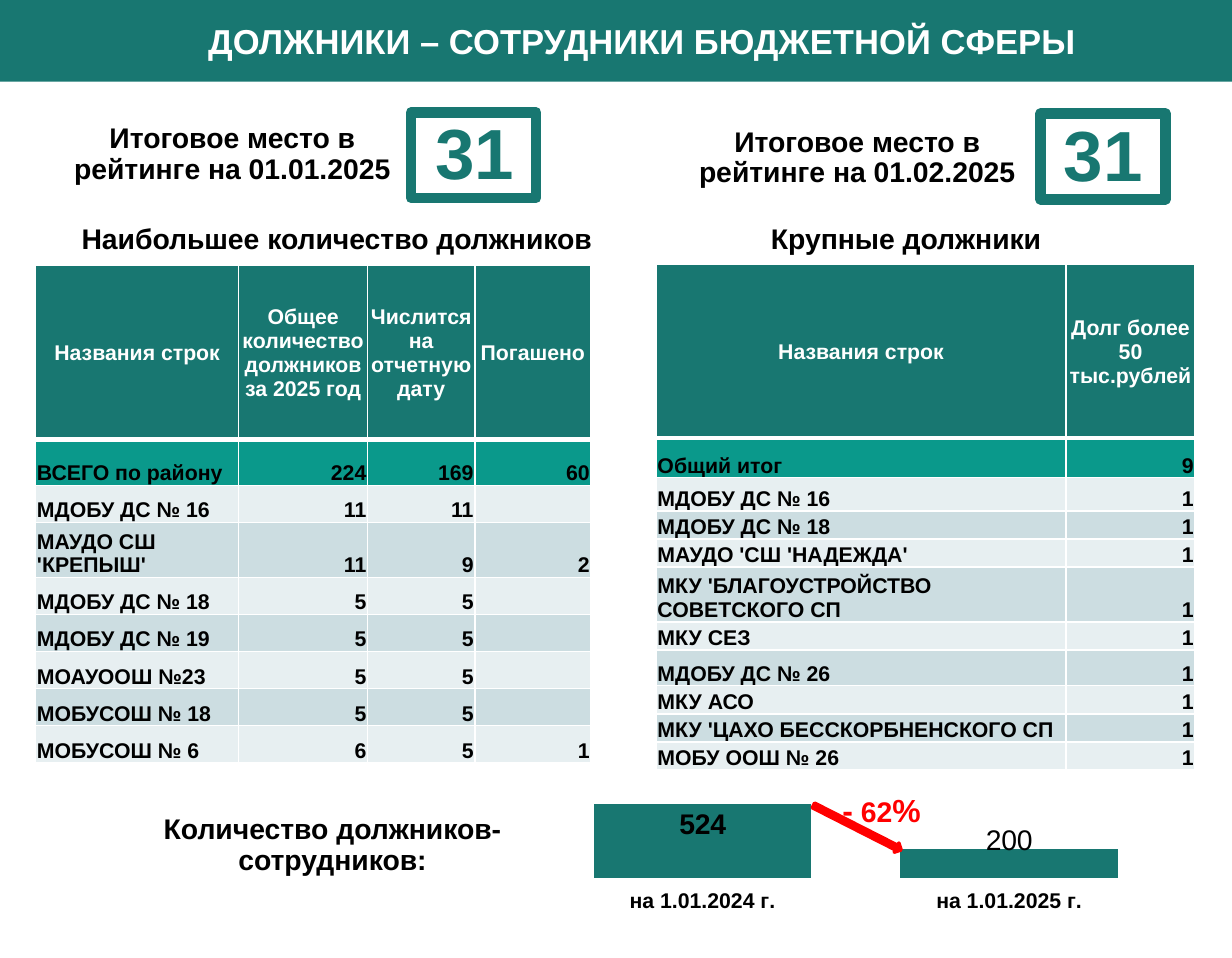
"""Builds the slide on public-sector employees in debt: ratings, two tables and a chart."""
from lxml.etree import fromstring
from pptx import Presentation
from pptx.chart.data import CategoryChartData
from pptx.dml.color import RGBColor
from pptx.enum.chart import XL_CHART_TYPE, XL_LABEL_POSITION, XL_TICK_LABEL_POSITION, XL_TICK_MARK
from pptx.enum.shapes import MSO_SHAPE
from pptx.enum.text import MSO_ANCHOR, MSO_AUTO_SIZE, PP_ALIGN
from pptx.oxml import parse_xml
from pptx.oxml.ns import nsdecls, qn
from pptx.util import Inches, Pt

COLORS = {"teal": "187771", "total": "0A998B", "light": "E7EFF1", "mid": "CCDDE1",
          "black": "000000", "white": "FFFFFF", "red": "FF0000"}
RGB = {name: RGBColor.from_string(value) for name, value in COLORS.items()}
COLUMNS, ROWS, CELL = 965, 750, Inches(0.01)
LEFT, CENTER, RIGHT = PP_ALIGN.LEFT, PP_ALIGN.CENTER, PP_ALIGN.RIGHT
TIGHT = {"margin_left": 7 * CELL, "margin_right": 7 * CELL, "margin_top": 4 * CELL,
         "margin_bottom": 4 * CELL, "vertical_anchor": MSO_ANCHOR.MIDDLE}
LOOSE = {"vertical_anchor": MSO_ANCHOR.TOP}
CELL_FORMAT = {"margin_left": CELL, "margin_right": CELL, "margin_top": CELL, "margin_bottom": 0}


def grid(*lengths):
    return [length * CELL for length in lengths]


def write(frame, runs, color, align, frame_format, spacing=None):
    for name, value in frame_format.items():
        setattr(frame, name, value)
    paragraph = frame.paragraphs[0]
    paragraph.alignment = align
    paragraph.line_spacing = spacing
    for text, size in runs:
        run = paragraph.add_run()
        run.text = text
        run.font.color.rgb = RGB[color]
        for name, value in {"name": "Arial", "size": Pt(size), "bold": True}.items():
            setattr(run.font, name, value)


presentation = Presentation()
presentation.slide_width, presentation.slide_height = grid(COLUMNS, ROWS)
slide = presentation.slides.add_slide(presentation.slide_layouts[5])
shapes = slide.shapes

title = shapes.title
title.left, title.top, title.width, title.height = grid(65, 2, 876, 64)
title.text_frame.auto_size = MSO_AUTO_SIZE.NONE
write(title.text_frame, [("ДОЛЖНИКИ – СОТРУДНИКИ БЮДЖЕТНОЙ СФЕРЫ", 19.5)], "white", CENTER, TIGHT, 0.9)
band = shapes.add_shape(MSO_SHAPE.RECTANGLE, *grid(0, -2, COLUMNS, 66))
band.shadow.inherit = False
band.fill.solid()
band.fill.fore_color.rgb = RGB["teal"]
band.line.fill.background()
title.element.addprevious(band.element)

for left, top in ((322, 88), (815, 89)):
    frame = shapes.add_shape(MSO_SHAPE.RECTANGLE, *grid(left, top, 98, 67))
    frame.shadow.inherit = False
    frame.fill.background()
    frame.line.color.rgb = RGB["teal"]
    frame.line.width = Pt(6)

texts = [
    ((33, 89, 298, 64), [("Итоговое место в рейтинге на 01.01.2025", 16)], "black", CENTER, TIGHT, 0.9),
    ((526, 92, 291, 64), [("Итоговое место в рейтинге на 01.02.2025", 16)], "black", CENTER, TIGHT, 0.9),
    ((323, 80, 98, 77), [("31", 40)], "teal", CENTER, LOOSE, None),
    ((815, 82, 98, 77), [("31", 40)], "teal", CENTER, LOOSE, None),
    ((54, 168, 458, 37), [("Наибольшее количество должников", 16)], "black", LEFT, LOOSE, None),
    ((594, 168, 263, 37), [("Крупные должники", 16)], "black", LEFT, LOOSE, None),
    ((65, 630, 391, 64), [("Количество должников-сотрудников:", 16)], "black", CENTER, TIGHT, 0.9),
]

tables = [
    ((28, 208), (159, 101, 84, 91), (136, 36, 29, 43, 29, 29, 29, 29, 29), [
        ("Названия строк", "Общее количество должников за 2025 год", "Числится на отчетную дату", "Погашено"),
        ("ВСЕГО по району", "224", "169", "60"),
        ("МДОБУ ДС № 16", "11", "11", ""),
        ("МАУДО СШ 'КРЕПЫШ'", "11", "9", "2"),
        ("МДОБУ ДС № 18", "5", "5", ""),
        ("МДОБУ ДС № 19", "5", "5", ""),
        ("МОАУООШ №23", "5", "5", ""),
        ("МОБУСОШ № 18", "5", "5", ""),
        ("МОБУСОШ № 6", "6", "5", "1")]),
    ((514, 207), (321, 101), (136, 31, 26, 22, 22, 43, 22, 28, 22, 22, 22), [
        ("Названия строк", "Долг более 50 тыс.рублей"),
        ("Общий итог", "9"),
        ("МДОБУ ДС № 16", "1"),
        ("МДОБУ ДС № 18", "1"),
        ("МАУДО 'СШ 'НАДЕЖДА'", "1"),
        ("МКУ 'БЛАГОУСТРОЙСТВО СОВЕТСКОГО СП", "1"),
        ("МКУ СЕЗ", "1"),
        ("МДОБУ ДС № 26", "1"),
        ("МКУ АСО", "1"),
        ("МКУ 'ЦАХО БЕССКОРБНЕНСКОГО СП", "1"),
        ("МОБУ ООШ № 26", "1")]),
]
for corner, widths, heights, records in tables:
    table = shapes.add_table(len(heights), len(widths), *grid(*corner, sum(widths), sum(heights))).table
    table.horz_banding = False
    for column, width in zip(table.columns, widths):
        column.width = width * CELL
    for row_index, (row, height, record) in enumerate(zip(table.rows, heights, records)):
        row.height = height * CELL
        header = row_index == 0
        fill = ("teal", "total")[row_index] if row_index < 2 else ("light", "mid")[row_index % 2]
        for column_index, (cell, text) in enumerate(zip(row.cells, record)):
            cell.fill.solid()
            cell.fill.fore_color.rgb = RGB[fill]
            for name, value in CELL_FORMAT.items():
                setattr(cell, name, value)
            cell.vertical_anchor = MSO_ANCHOR.MIDDLE if header else MSO_ANCHOR.BOTTOM
            align = CENTER if header else RIGHT if column_index else LEFT
            write(cell.text_frame, [(text, 12)], "white" if header else "black", align, {})
            properties = cell._tc.get_or_add_tcPr()
            for position, side in enumerate("LRTB"):
                thick = (row_index, side) in ((0, "B"), (1, "T"))
                properties.insert(position, parse_xml(
                    f'<a:ln{side} {nsdecls("a")} w="{Pt(3 if thick else 1)}"><a:solidFill>'
                    f'<a:srgbClr val="{COLORS["white"]}"/></a:solidFill></a:ln{side}>'))

data = CategoryChartData()
data.categories = ["на 1.01.2024 г.", "на 1.01.2025 г."]
data.add_series("Series 1", (524, 205))
chart = shapes.add_chart(XL_CHART_TYPE.COLUMN_CLUSTERED, *grid(415, 589, 511, 131), data).chart
chart.has_legend = chart.has_title = False
chart.font.name, chart.font.size = "Arial", Pt(10)
chart.font.color.rgb = RGB["black"]
value_axis, category_axis = chart.value_axis, chart.category_axis
value_format = {"minimum_scale": 0, "maximum_scale": 800, "has_major_gridlines": False, "visible": False}
category_format = {"major_tick_mark": XL_TICK_MARK.NONE, "tick_label_position": XL_TICK_LABEL_POSITION.LOW}
for axis, axis_format in ((value_axis, value_format), (category_axis, category_format)):
    for name, value in axis_format.items():
        setattr(axis, name, value)
category_axis.format.line.fill.background()

plot = chart.plots[0]
plot.gap_width, plot.vary_by_categories = 41, False
series = plot.series[0]
series.format.fill.solid()
series.format.fill.fore_color.rgb = RGB["teal"]
labels = series.data_labels
labels.show_value, labels.position = True, XL_LABEL_POSITION.INSIDE_END
for font, size in ((labels.font, 16), (category_axis.tick_labels.font, 12)):
    font.name, font.size, font.bold = "Arial", Pt(size), True
    font.color.rgb = RGB["black"]
point_label = series.points[1].data_label
write(point_label.text_frame, [("200", 16)], "black", CENTER, {})
point_label.text_frame.paragraphs[0].runs[0].font.bold = False
point_label.position = XL_LABEL_POSITION.INSIDE_END

plot_area = chart.element.find(".//" + qn("c:plotArea"))
for empty_layout in plot_area.findall(qn("c:layout")):
    plot_area.remove(empty_layout)
layout = '<c:layout {}><c:manualLayout>{}</c:manualLayout></c:layout>'
plot_area.insert(0, fromstring(layout.format(
    nsdecls("c"), '<c:layoutTarget val="inner"/><c:xMode val="edge"/><c:yMode val="edge"/>'
    '<c:x val="0.03"/><c:y val="0.08"/><c:w val="0.94"/><c:h val="0.67"/>')))
label_index = chart.element.find(".//" + qn("c:dLbl") + "/" + qn("c:idx"))
label_index.addnext(fromstring(layout.format(nsdecls("c"), '<c:x val="0"/><c:y val="-0.17"/>')))

arrow = shapes.add_shape(MSO_SHAPE.RIGHT_ARROW, *grid(633, 644, 77, 8))
arrow.shadow.inherit = False
arrow.rotation = 26.9
arrow.fill.solid()
arrow.fill.fore_color.rgb = arrow.line.color.rgb = RGB["red"]
arrow.line.width = Pt(2)

texts.append(((632, 614, 117, 40), [("-", 18), (" 62", 16), ("%", 18)], "red", CENTER, LOOSE, None))
for box, *content in texts:
    text_frame = shapes.add_textbox(*grid(*box)).text_frame
    text_frame.word_wrap = True
    write(text_frame, *content)

presentation.save("out.pptx")
